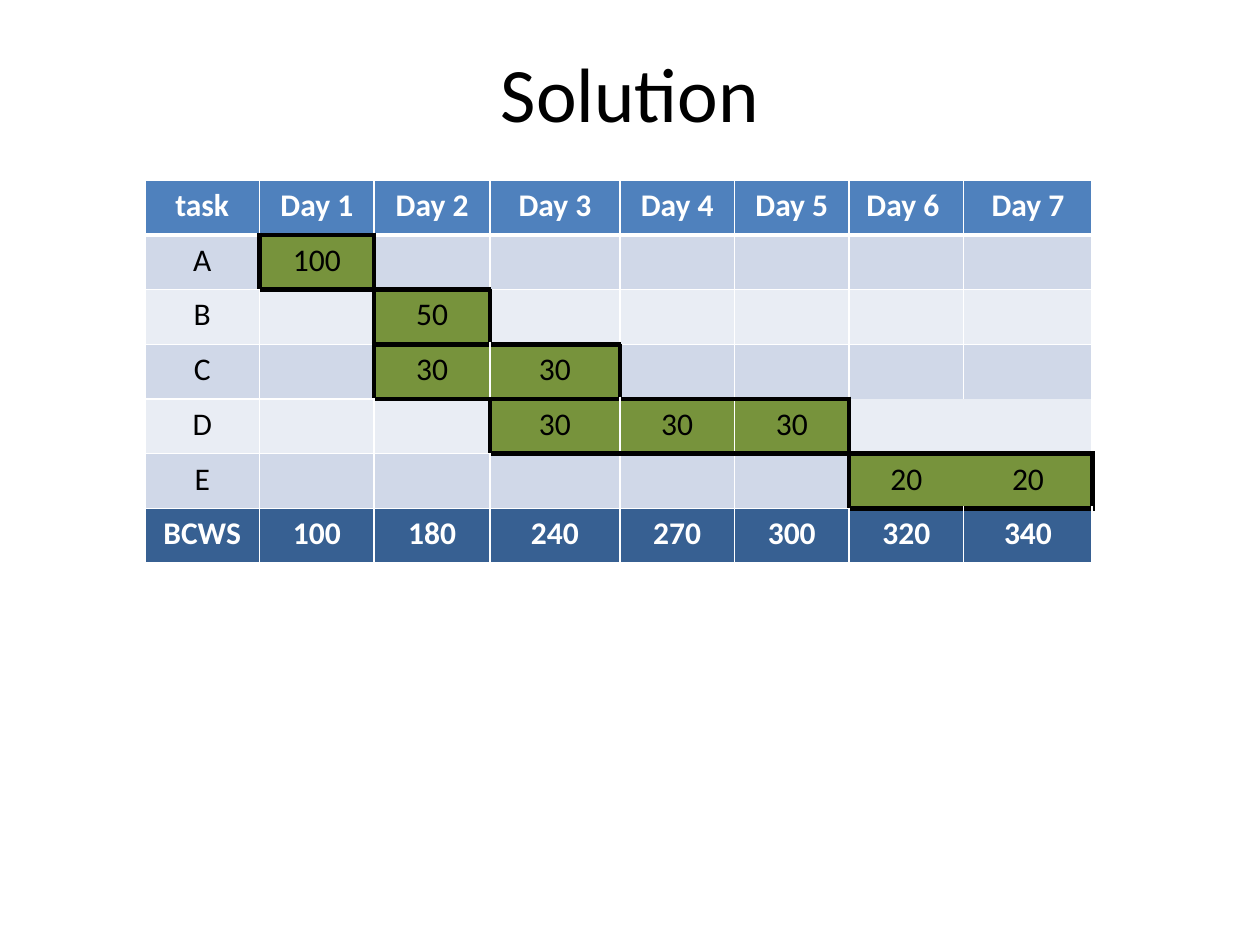
from dataclasses import dataclass
from typing import Optional

import lxml.etree
import pptx
import pptx.dml.color
import pptx.enum.text
import pptx.oxml.ns
import pptx.util

Inches = pptx.util.Inches
Pt = pptx.util.Pt
RGBColor = pptx.dml.color.RGBColor
qn = pptx.oxml.ns.qn

BLACK = RGBColor(0x00, 0x00, 0x00)
WHITE = RGBColor(0xFF, 0xFF, 0xFF)
HEADER_BLUE = RGBColor(0x4F, 0x81, 0xBD)
TOTAL_BLUE = RGBColor(0x37, 0x60, 0x92)
BAND_DARK = RGBColor(0xD0, 0xD8, 0xE8)
BAND_LIGHT = RGBColor(0xE9, 0xED, 0xF4)
BAR_GREEN = RGBColor(0x77, 0x93, 0x3C)
FONT = "Calibri"


@dataclass(frozen=True)
class Task:
    name: str
    first_day: int
    costs: tuple[int, ...]


@dataclass(frozen=True)
class Edge:
    color: RGBColor
    width: int


TASKS = (
    Task("A", 1, (100,)),
    Task("B", 2, (50,)),
    Task("C", 2, (30, 30)),
    Task("D", 3, (30, 30, 30)),
    Task("E", 6, (20, 20)),
)
HEADERS = ("task", "Day 1", "Day 2", "Day 3", "Day 4", "Day 5", "Day 6 ", "Day 7")
TOTALS = ("BCWS", "100", "180", "240", "270", "300", "320", "340")
COLUMN_WIDTHS = (0.91, 0.91, 0.92, 1.03, 0.91, 0.91, 0.91, 1.02)
TOTAL_ROW = len(TASKS) + 1
TABLE_HEIGHT = 3.04
SIDES = {"a:lnL": (0, -1), "a:lnR": (0, 1), "a:lnT": (-1, 0), "a:lnB": (1, 0)}
OPEN_EDGES = {
    frozenset({(3, 6), (4, 6)}),
    frozenset({(3, 7), (4, 7)}),
    frozenset({(5, 6), (5, 7)}),
}
GRID_EDGE = Edge(WHITE, 1)
HEADER_EDGE = Edge(WHITE, 3)
BAR_EDGE = Edge(BLACK, 3)


def task_cost(row: int, column: int) -> Optional[int]:
    """Return the cost planned in a cell, or None outside the task bars."""
    if not 1 <= row < TOTAL_ROW:
        return None
    task = TASKS[row - 1]
    day = column - task.first_day
    return task.costs[day] if 0 <= day < len(task.costs) else None


def bar_row(row: int, column: int) -> Optional[int]:
    """Return the row of the bar that covers a cell, if any."""
    return None if task_cost(row, column) is None else row


def edge_between(cell: tuple[int, int], neighbour: tuple[int, int]) -> Optional[Edge]:
    """Choose the line between two neighbouring cells."""
    if bar_row(*cell) != bar_row(*neighbour):
        return BAR_EDGE
    if frozenset({cell, neighbour}) in OPEN_EDGES:
        return None
    if {cell[0], neighbour[0]} == {0, 1}:
        return HEADER_EDGE
    return GRID_EDGE


def cell_text(row: int, column: int) -> str:
    """Return the wording of a cell."""
    if row == 0:
        return HEADERS[column]
    if row == TOTAL_ROW:
        return TOTALS[column]
    if column == 0:
        return TASKS[row - 1].name
    cost = task_cost(row, column)
    return "" if cost is None else str(cost)


def cell_fill(row: int, column: int) -> RGBColor:
    """Return the background colour of a cell."""
    if row == 0:
        return HEADER_BLUE
    if row == TOTAL_ROW:
        return TOTAL_BLUE
    if bar_row(row, column) is not None:
        return BAR_GREEN
    return BAND_DARK if row % 2 else BAND_LIGHT


def format_text(paragraph, size: int, color: RGBColor, bold: bool = False) -> None:
    """Centre a paragraph and format its text."""
    paragraph.alignment = pptx.enum.text.PP_ALIGN.CENTER
    for span in (paragraph, *paragraph.runs):
        span.font.name = FONT
        span.font.size = Pt(size)
        span.font.bold = bold
        span.font.color.rgb = color


def draw_borders(cell, row: int, column: int) -> None:
    """Draw the four borders of a cell."""
    properties = cell._tc.get_or_add_tcPr()
    for position, (tag, (down, right)) in enumerate(SIDES.items()):
        edge = edge_between((row, column), (row + down, column + right))
        line = lxml.etree.Element(qn(tag))
        if edge is None:
            lxml.etree.SubElement(line, qn("a:noFill"))
        else:
            line.set("w", str(Pt(edge.width)))
            fill = lxml.etree.SubElement(line, qn("a:solidFill"))
            lxml.etree.SubElement(fill, qn("a:srgbClr"), val=str(edge.color))
        properties.insert(position, line)


def draw_title(page) -> None:
    """Add the slide title."""
    box = page.shapes.add_textbox(Inches(0.5), Inches(0.3), Inches(9), Inches(0.85))
    frame = box.text_frame
    frame.word_wrap = True
    frame.vertical_anchor = pptx.enum.text.MSO_ANCHOR.MIDDLE
    frame.text = "Solution"
    format_text(frame.paragraphs[0], 44, BLACK)


def draw_schedule(page) -> None:
    """Add the schedule table with its task bars."""
    row_count = TOTAL_ROW + 1
    table = page.shapes.add_table(
        row_count, len(HEADERS), Inches(1.15), Inches(1.43),
        Inches(sum(COLUMN_WIDTHS)), Inches(TABLE_HEIGHT),
    ).table
    for table_column, width in zip(table.columns, COLUMN_WIDTHS):
        table_column.width = Inches(width)
    for row, table_row in enumerate(table.rows):
        table_row.height = Inches(TABLE_HEIGHT / row_count)
        strong = row in (0, TOTAL_ROW)
        for column, cell in enumerate(table_row.cells):
            cell.text_frame.text = cell_text(row, column)
            format_text(cell.text_frame.paragraphs[0], 18, WHITE if strong else BLACK, strong)
            cell.fill.solid()
            cell.fill.fore_color.rgb = cell_fill(row, column)
            draw_borders(cell, row, column)
    table.cell(4, 6).merge(table.cell(4, 7))


def main() -> None:
    """Build and save the slide."""
    deck = pptx.Presentation()
    deck.slide_width = Inches(10)
    deck.slide_height = Inches(7.5)
    page = deck.slides.add_slide(deck.slide_layouts[6])
    draw_title(page)
    draw_schedule(page)
    deck.save("out.pptx")


if __name__ == "__main__":
    main()
